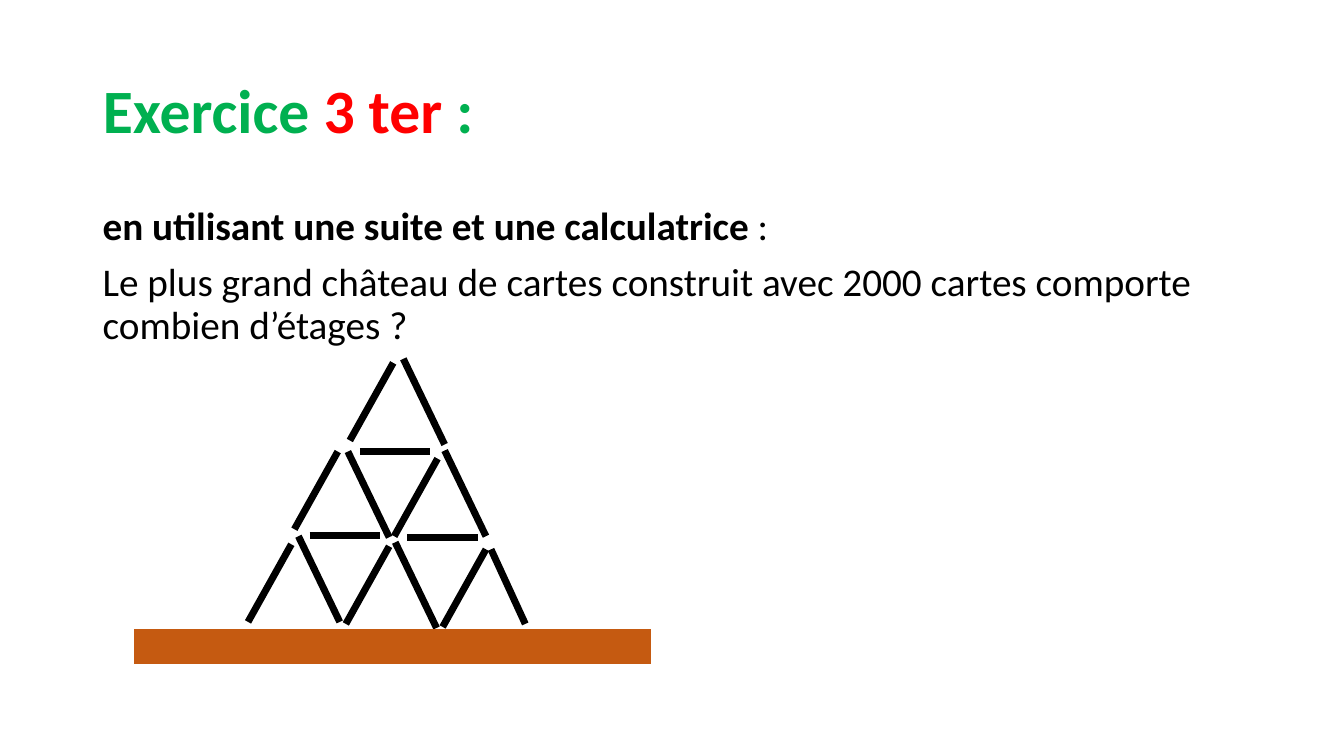
from lxml import etree
from pptx import Presentation
from pptx.dml.color import RGBColor
from pptx.enum.shapes import MSO_CONNECTOR
from pptx.enum.text import MSO_ANCHOR, PP_ALIGN
from pptx.oxml.ns import qn
from pptx.util import Inches, Pt

STRAIGHT = MSO_CONNECTOR.STRAIGHT
LEFT, MIDDLE, TOP = PP_ALIGN.LEFT, MSO_ANCHOR.MIDDLE, MSO_ANCHOR.TOP
COLORS = {"green": "00B050", "red": "FF0000", "black": "000000", "table": "C55A11"}

# Each lean: card offset (dx, dy), then the top or left end of its cards
CARDS = [
    ((-0.43, 0.77), [(3.9, 3.6), (3.35, 4.48), (4.34, 4.55),
                     (2.89, 5.4), (3.86, 5.42), (4.82, 5.45)]),
    ((0.41, 0.85), [(4, 3.56), (3.45, 4.48), (4.41, 4.47),
                    (2.96, 5.32), (3.92, 5.38)]),
    ((0.34, 0.74), [(4.87, 5.45)]),
    ((0.7, 0), [(3.57, 4.48), (3.07, 5.31), (4.04, 5.33)]),
]


def color(name):
    return RGBColor.from_string(COLORS[name])


def set_frame(shape, box, anchor):
    names = ("left", "top", "width", "height")
    for name, value in zip(names, box):
        setattr(shape, name, Inches(value))
    frame = shape.text_frame
    frame.word_wrap = True
    frame.vertical_anchor = anchor
    return frame


def add_runs(para, runs, size, before=0):
    form = {"alignment": LEFT, "line_spacing": 0.9, "space_before": Pt(before)}
    for name, value in form.items():
        setattr(para, name, value)
    for text, tint, bold in runs:
        run = para.add_run()
        run.text = text
        for name, value in {"name": "Calibri", "size": Pt(size), "bold": bold}.items():
            setattr(run.font, name, value)
        run.font.color.rgb = color(tint)


def add_line(slide, start, end, tint, width):
    ends = [Inches(value) for value in (*start, *end)]
    line = slide.shapes.add_connector(STRAIGHT, *ends)
    line.line.color.rgb = color(tint)
    line.line.width = Pt(width)
    etree.SubElement(line._element.spPr, qn("a:effectLst"))


def add_cards(slide):
    for (dx, dy), starts in CARDS:
        for x, y in starts:
            add_line(slide, (x, y), (x + dx, y + dy), "black", 5)


def main():
    deck = Presentation()
    deck.slide_width, deck.slide_height = Inches(13.33), Inches(7.5)
    slide = deck.slides.add_slide(deck.slide_layouts[5])

    # Title
    frame = set_frame(slide.shapes.title, (0.92, 0.4, 11.5, 1.45), MIDDLE)
    add_runs(frame.paragraphs[0], [("Exercice ", "green", True),
                                   ("3 ter", "red", True),
                                   (" :", "green", True)], 44)

    # Question
    box = (0.92, 2, 11.5, 4.76)
    text = slide.shapes.add_textbox(*map(Inches, box))
    frame = set_frame(text, box, TOP)
    add_runs(frame.paragraphs[0],
             [("en utilisant une suite et une calculatrice ", "black", True),
              (":", "black", False)], 28, 10)
    add_runs(frame.add_paragraph(),
             [("Le plus grand château de cartes construit avec 2000 cartes "
               "comporte combien d’étages ?", "black", False)], 28, 10)

    # House of cards on its table
    add_cards(slide)
    add_line(slide, (1.33, 6.41), (6.46, 6.41), "table", 25)

    deck.save("out.pptx")


if __name__ == "__main__":
    main()
